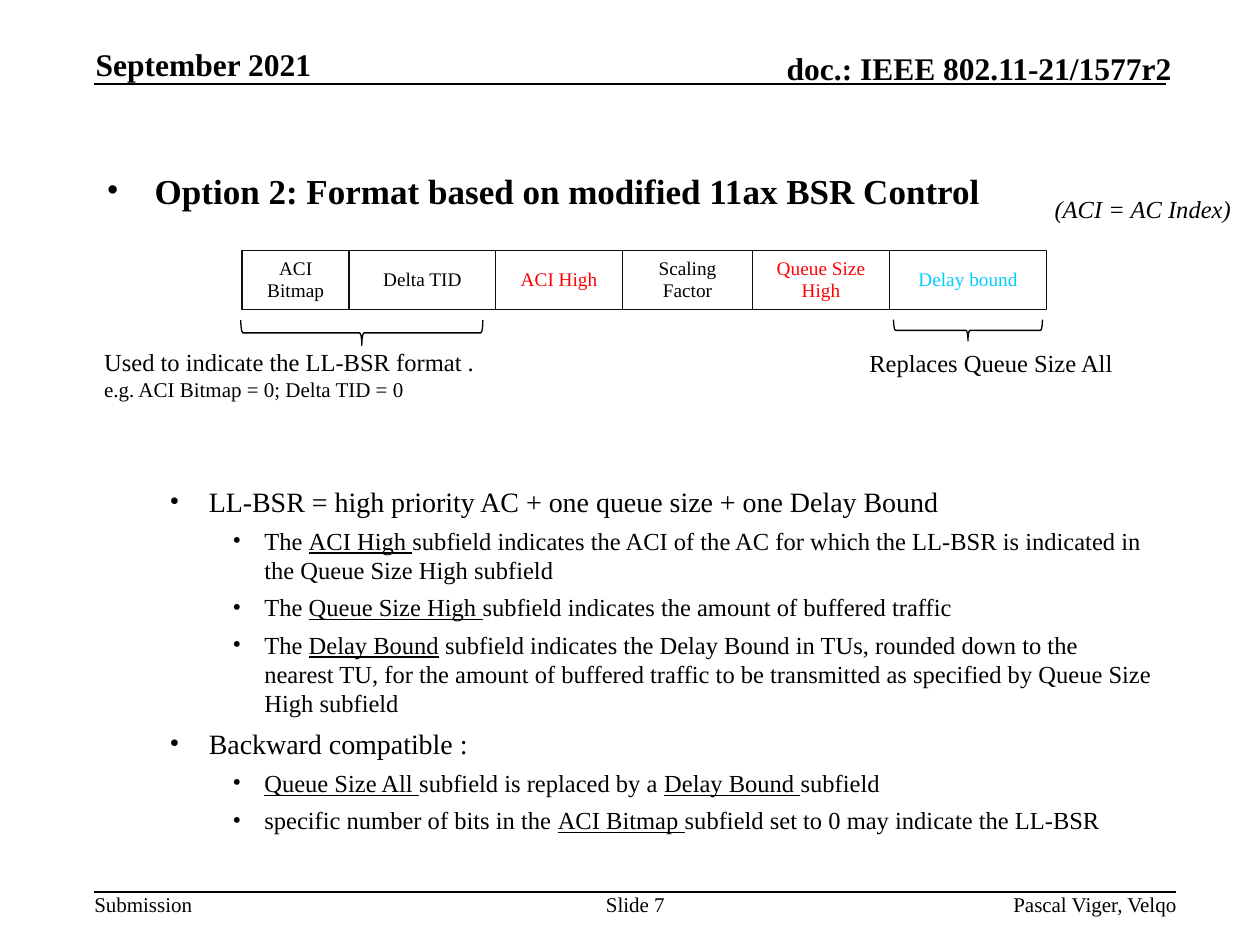
from lxml import etree
from pptx import Presentation
from pptx.dml.color import RGBColor
from pptx.enum.shapes import MSO_CONNECTOR, MSO_SHAPE
from pptx.enum.text import MSO_ANCHOR, PP_ALIGN
from pptx.oxml.ns import qn
from pptx.util import Cm, Pt

LEFT, CENTER, RIGHT = PP_ALIGN.LEFT, PP_ALIGN.CENTER, PP_ALIGN.RIGHT
TOP, MIDDLE, BOTTOM = MSO_ANCHOR.TOP, MSO_ANCHOR.MIDDLE, MSO_ANCHOR.BOTTOM
STRAIGHT, BRACE = MSO_CONNECTOR.STRAIGHT, MSO_SHAPE.LEFT_BRACE
FONT = "Times New Roman"
COLORS = {"black": "000000", "border": "101010", "red": "FF0000", "cyan": "00CCFF"}


def write(paragraph, text, size, color="black", bold=False, italic=False, align=LEFT):
    """Fill a paragraph; parts between underscores are underlined."""
    paragraph.alignment = align
    for index, part in enumerate(text.split("_")):
        if part:
            run = paragraph.add_run()
            run.text = part
            font = run.font
            font.name, font.size = FONT, Pt(size)
            font.bold, font.italic = bold, italic
            font.underline = index % 2 == 1
            font.color.rgb = RGBColor.from_string(COLORS[color])


def text_frame_at(left, top, width, height, inset=(0, 0), anchor=TOP, wrap=True):
    """Add a text box in cm with (horizontal, vertical) insets."""
    frame = slide.shapes.add_textbox(Cm(left), Cm(top), Cm(width), Cm(height)).text_frame
    frame.margin_left = frame.margin_right = Cm(inset[0])
    frame.margin_top = frame.margin_bottom = Cm(inset[1])
    frame.vertical_anchor, frame.word_wrap = anchor, wrap
    return frame


prs = Presentation()
prs.slide_width, prs.slide_height = Cm(25.4), Cm(19.05)
slide = prs.slides.add_slide(prs.slide_layouts[6])

# Header and footer rules
for right, y in [(23.5, 1.7), (23.7, 17.99)]:
    rule = slide.shapes.add_connector(STRAIGHT, Cm(1.9), Cm(y), Cm(right), Cm(y))
    rule.line.color.rgb = RGBColor.from_string(COLORS["black"])
    rule.line.width = Pt(1)
    etree.SubElement(rule._element.spPr, qn("a:effectLst"))

# Header and footer texts
for text, left, top, width, height, size, align, anchor in [
    ("September 2021", 1.93, 0.92, 5.2, 0.76, 18, LEFT, BOTTOM),
    ("doc.: IEEE 802.11-21/1577r2", 13.89, 1, 9.73, 0.76, 18, RIGHT, BOTTOM),
    ("Submission", 1.9, 17.98, 1.98, 0.51, 12, LEFT, TOP),
    ("Slide 7", 12.07, 17.98, 1.48, 1.02, 12, CENTER, TOP),
    ("Pascal Viger, Velqo", 14.88, 17.98, 8.84, 0.51, 12, RIGHT, TOP),
]:
    frame = text_frame_at(left, top, width, height, anchor=anchor, wrap=size == 18 or align != LEFT)
    write(frame.paragraphs[0], text, size, bold=size == 18, align=align)

# Body: level -> (left margin cm, hanging cm, size, space before)
levels = [(0.97, 0.97, 20, 0), (2.06, 0.79, 16, 5), (3.18, 0.64, 14, 4.5)]
points = [
    (0, "Option 2: Format based on modified 11ax BSR Control"),
    (1, "LL-BSR = high priority AC + one queue size + one Delay Bound"),
    (2, "The _ACI High _subfield indicates the ACI of the AC for which the LL-BSR "
        "is indicated in the Queue Size High subfield"),
    (2, "The _Queue Size High _subfield indicates the amount of buffered traffic"),
    (2, "The _Delay Bound_ subfield indicates the Delay Bound in TUs, rounded down to the "
        "nearest TU, for the amount of buffered traffic to be transmitted as specified by "
        "Queue Size High subfield"),
    (1, "Backward compatible :"),
    (2, "_Queue Size All _subfield is replaced by a _Delay Bound _subfield"),
    (2, "specific number of bits in the _ACI Bitmap _subfield set to 0 may indicate the LL-BSR"),
]
body = text_frame_at(1.9, 2.11, 21.59, 14.81, inset=(0.25, 0.13))
body.margin_top = Cm(1.3)
for index, (level, text) in enumerate(points):
    paragraph = body.add_paragraph() if index else body.paragraphs[0]
    margin, hanging, size, before = levels[level]
    write(paragraph, text, size, bold=level == 0)
    paragraph.level = level
    paragraph.space_before = Pt(before)
    props = paragraph._p.get_or_add_pPr()
    props.set("marL", str(Cm(margin)))
    props.set("indent", str(-Cm(hanging)))
    etree.SubElement(props, qn("a:buFont"), typeface=FONT)
    etree.SubElement(props, qn("a:buChar"), char="•")
body.paragraphs[1].space_before = Pt(156)  # room for the frame format table

# Frame format table
subfields = [
    ("ACI Bitmap", 2.16, "black"),
    ("Delta TID", 2.95, "black"),
    ("ACI High", 2.56, "red"),
    ("Scaling Factor", 2.62, "black"),
    ("Queue Size High", 2.76, "red"),
    ("Delay bound", 3.17, "cyan"),
]
total_width = sum(width for _, width, _ in subfields)
table = slide.shapes.add_table(
    1, len(subfields), Cm(4.88), Cm(5.05), Cm(total_width), Cm(1.18)).table
table.first_row = table.horz_banding = False
for column, (name, width, color) in enumerate(subfields):
    table.columns[column].width = Cm(width)
    cell = table.cell(0, column)
    cell.vertical_anchor = MIDDLE
    write(cell.text_frame.paragraphs[0], name, 11, color, align=CENTER)
    cell_props = cell._tc.get_or_add_tcPr()
    for side in ("lnL", "lnR", "lnT", "lnB"):
        border = etree.SubElement(cell_props, qn("a:" + side), w=str(Pt(1)))
        fill = etree.SubElement(border, qn("a:solidFill"))
        etree.SubElement(fill, qn("a:srgbClr"), val=COLORS["border"])
    cell.fill.background()

# Braces under the table
for left, top, width, height in [(7.04, 4.27, 0.51, 4.88), (19.3, 5.16, 0.43, 3)]:
    brace = slide.shapes.add_shape(BRACE, Cm(left), Cm(top), Cm(width), Cm(height))
    brace.rotation = 270
    brace.shadow.inherit = False
    brace.fill.background()
    brace.line.color.rgb = RGBColor.from_string(COLORS["black"])
    brace.line.width = Pt(0.75)

# Table remarks
format_note = text_frame_at(1.85, 6.86, 8.31, 1.37, inset=(0.25, 0.13))
write(format_note.paragraphs[0], "Used to indicate the LL-BSR format .", 14)
write(format_note.add_paragraph(), "e.g. ACI Bitmap = 0; Delta TID = 0", 12)
replace_note = text_frame_at(17.07, 6.88, 5.82, 0.86, inset=(0.25, 0.13))
write(replace_note.paragraphs[0], "Replaces Queue Size All", 14, align=CENTER)
index_note = text_frame_at(21.01, 3.78, 4.09, 0.86, inset=(0.25, 0.13), wrap=False)
write(index_note.paragraphs[0], "(ACI = AC Index)", 14, italic=True)

prs.save("out.pptx")
